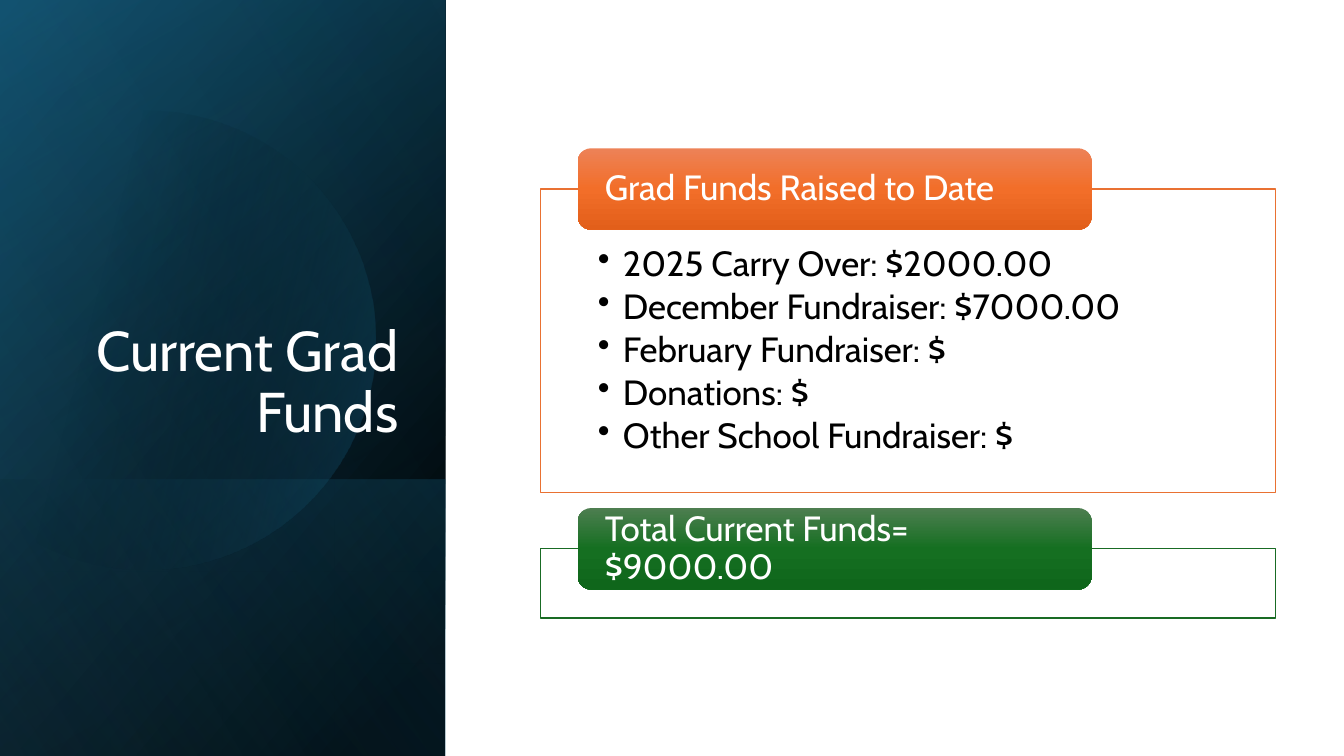
"""Build the slide that lists the current grad funds."""
import math

import pptx
import pptx.dml.color
import pptx.enum.shapes
import pptx.enum.text
import pptx.oxml
import pptx.oxml.ns
import pptx.util

TITLE = "Current Grad Funds"
CARDS = [
    {
        "heading": "Grad Funds Raised to Date",
        "items": [
            "2025 Carry Over: $2000.00",
            "December Fundraiser: $7000.00",
            "February Fundraiser: $",
            "Donations: $",
            "Other School Fundraiser: $",
        ],
        "top": 135, "height": 217, "line": "E97132",
        "stops": [(0, "ED8257", 100), (50, "F26E29", 100), (100, "E25F1A", 100)],
    },
    {
        "heading": "Total Current Funds= $9000.00",
        "items": [],
        "top": 392, "height": 49.5, "line": "196B24",
        "stops": [(0, "4D7E50", 100), (50, "156F21", 100), (100, "0F661B", 100)],
    },
]
SLIDE_WIDTH, SLIDE_HEIGHT = 960, 540
PANEL_WIDTH = 318
LOWER_TOP = 342.7
BACK_PANELS = [
    (0, [(8, "000000", 100), (100, "104862", 100)], 50),
    (0, [(0, "000000", 0), (99, "156082", 46)], 30),
    (LOWER_TOP, [(2, "156082", 29), (100, "000000", 30)], 130),
]
FRONT_PANEL = (0, [(0, "000000", 0), (99, "46B1E1", 11)], 120)
CIRCLE_X, CIRCLE_Y, CIRCLE_RADIUS = 104, 243, 164
CIRCLE_STOPS = [(29, "000000", 0), (100, "156082", 43)]
CARD_LEFT, CARD_WIDTH = 386, 525
HEADING_LEFT, HEADING_WIDTH, HEADING_HEIGHT = 412.6, 367.2, 58.2
FONT = "Cabin"
SHAPES = pptx.enum.shapes.MSO_SHAPE
ALIGN = pptx.enum.text.PP_ALIGN
ANCHOR = pptx.enum.text.MSO_ANCHOR
Pt = pptx.util.Pt

presentation = pptx.Presentation()
presentation.slide_width, presentation.slide_height = Pt(SLIDE_WIDTH), Pt(SLIDE_HEIGHT)
slide = presentation.slides.add_slide(presentation.slide_layouts[6])


def color(text):
    return pptx.dml.color.RGBColor.from_string(text)


def add_block(kind, left, top, width, height):
    shape = slide.shapes.add_shape(kind, Pt(left), Pt(top), Pt(width), Pt(height))
    shape.shadow.inherit = False
    shape.line.fill.background()
    return shape


def fill_gradient(shape, stops, angle):
    shape.fill.background()
    empty = shape.element.spPr.find(pptx.oxml.ns.qn("a:noFill"))
    stop_xml = "".join(
        f'<a:gs pos="{position * 1000}"><a:srgbClr val="{value}">'
        f'<a:alpha val="{alpha * 1000}"/></a:srgbClr></a:gs>'
        for position, value, alpha in stops
    )
    gradient = pptx.oxml.parse_xml(
        f'<a:gradFill {pptx.oxml.ns.nsdecls("a")} rotWithShape="1"><a:gsLst>{stop_xml}</a:gsLst>'
        f'<a:lin ang="{angle * 60000}" scaled="0"/></a:gradFill>'
    )
    empty.getparent().replace(empty, gradient)


def add_panel(top, stops, angle):
    height = SLIDE_HEIGHT - top
    shift = (PANEL_WIDTH - height) / 2
    shape = add_block(SHAPES.RECTANGLE, shift, top - shift, height, PANEL_WIDTH)
    shape.rotation = 90
    shape.element.spPr.xfrm.set("flipH", "1")
    fill_gradient(shape, stops, angle)


def add_circle():
    limit = math.acos(-CIRCLE_X / CIRCLE_RADIUS)
    angles = [limit * (step / 60 - 1) for step in range(121)]
    points = [
        (Pt(CIRCLE_X + CIRCLE_RADIUS * math.cos(angle)), Pt(CIRCLE_Y + CIRCLE_RADIUS * math.sin(angle)))
        for angle in angles
    ]
    builder = slide.shapes.build_freeform(*points[0])
    builder.add_line_segments(points[1:])
    shape = builder.convert_to_shape()
    shape.shadow.inherit = False
    shape.line.fill.background()
    fill_gradient(shape, CIRCLE_STOPS, 14)


def write(shape, lines, *, size, ink, align=ALIGN.LEFT, anchor=ANCHOR.TOP,
          margins=(7.2, 3.6, 7.2, 3.6), bullet=False, after=0):
    frame = shape.text_frame
    frame.word_wrap = True
    frame.vertical_anchor = anchor
    frame.margin_left, frame.margin_top, frame.margin_right, frame.margin_bottom = map(Pt, margins)
    for index, line in enumerate(lines):
        paragraph = frame.paragraphs[0] if index == 0 else frame.add_paragraph()
        paragraph.text = line
        paragraph.alignment = align
        paragraph.line_spacing = 0.9
        paragraph.space_after = Pt(after)
        if bullet:
            properties = paragraph._p.get_or_add_pPr()
            properties.set("marL", str(Pt(18)))
            properties.set("indent", str(-Pt(18)))
            properties.append(pptx.oxml.parse_xml(
                f'<a:buChar {pptx.oxml.ns.nsdecls("a")} char="•"/>'))
        font = paragraph.runs[0].font
        font.name, font.size, font.color.rgb = FONT, Pt(size), color(ink)


def add_card(card):
    body = add_block(SHAPES.RECTANGLE, CARD_LEFT, card["top"], CARD_WIDTH, card["height"])
    body.fill.solid()
    body.fill.fore_color.rgb = color("FFFFFF")
    body.line.color.rgb = color(card["line"])
    body.line.width = Pt(1)
    if card["items"]:
        write(body, card["items"], size=25, ink="000000", margins=(41, 41, 41, 13.7),
              bullet=True, after=3.75)
    heading = add_block(SHAPES.ROUNDED_RECTANGLE, HEADING_LEFT, card["top"] - HEADING_HEIGHT / 2,
                        HEADING_WIDTH, HEADING_HEIGHT)
    fill_gradient(heading, card["stops"], 90)
    write(heading, [card["heading"]], size=25, ink="FFFFFF", anchor=ANCHOR.MIDDLE,
          margins=(16.6, 0, 16.6, 0))


for panel in BACK_PANELS:
    add_panel(*panel)
add_circle()
add_panel(*FRONT_PANEL)
title = slide.shapes.add_textbox(Pt(46), Pt(132.5), Pt(245.5), Pt(188.6))
write(title, [TITLE], size=40, ink="FFFFFF", align=ALIGN.RIGHT, anchor=ANCHOR.BOTTOM)
for fund_card in CARDS:
    add_card(fund_card)
presentation.save("out.pptx")
